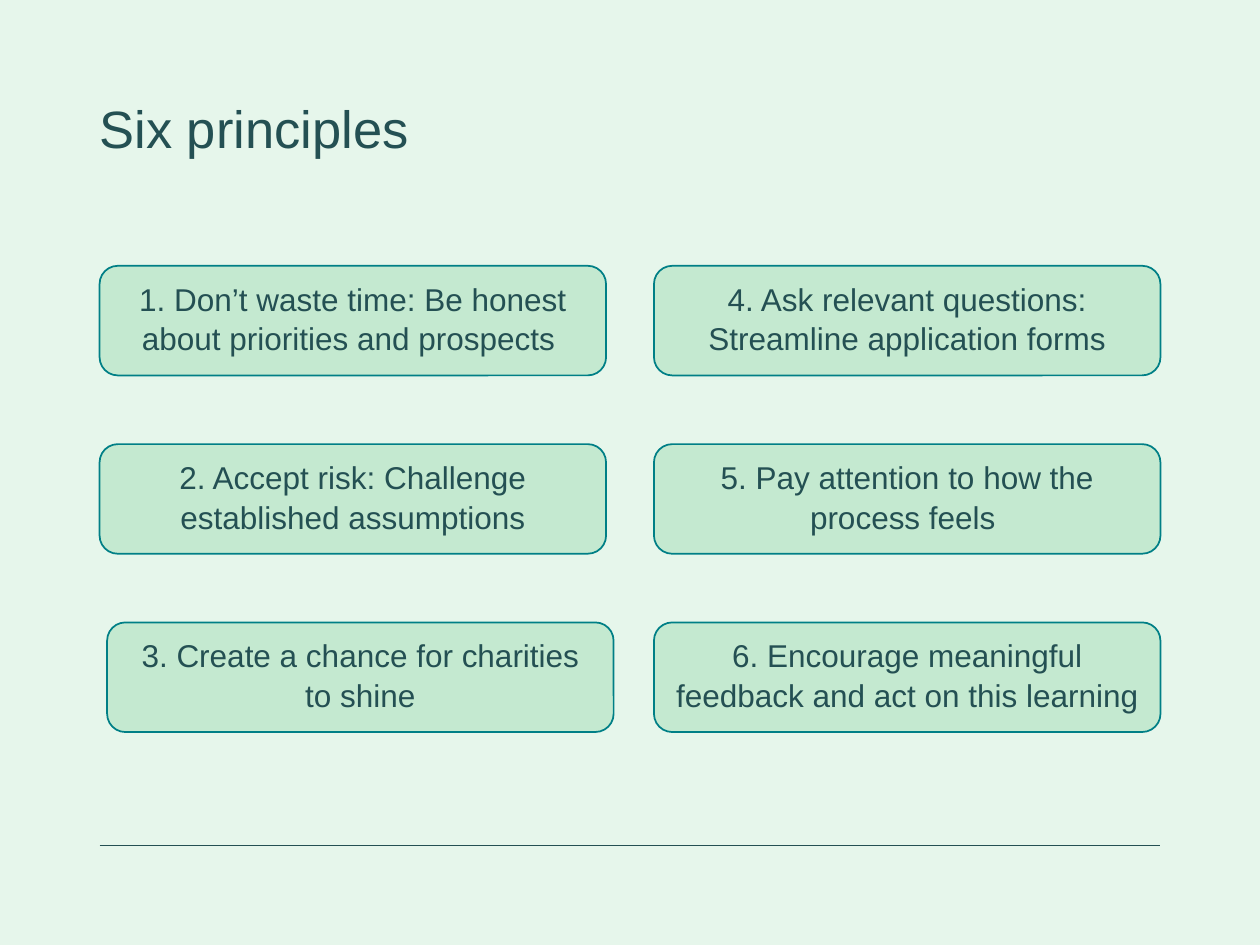
from pptx import Presentation
from pptx.dml.color import RGBColor as RGB
from pptx.enum.shapes import MSO_CONNECTOR as Link, MSO_SHAPE as Shape
from pptx.enum.text import MSO_ANCHOR as Anchor, PP_ALIGN as Align
from pptx.oxml.ns import qn
from pptx.util import Inches, Pt
from lxml.etree import SubElement

HUES = {"back": "E6F6EB", "box": "C4E9D0", "edge": "007F86", "ink": "245053"}
LEFT, RIGHT = 0.79, 9.21
COLS = (LEFT, 5.19)
TOP, STEP = 2.11, 1.415
WIDE, HIGH = 4.02, 0.87
NUDGE = {2: 0.06}  # the third box sits slightly to the right

RULES = (
    "1. Don’t waste time: Be honest about priorities and prospects ",
    "2. Accept risk: Challenge established assumptions",
    "3. Create a chance for charities to shine",
    "4. Ask relevant questions: Streamline application forms",
    "5. Pay attention to how the process feels ",
    "6. Encourage meaningful feedback and act on this learning",
)


def hue(name):
    return RGB.from_string(HUES[name])


def write(frame, text, size, align):
    frame.word_wrap = True
    frame.vertical_anchor = Anchor.MIDDLE
    frame.text = text
    para = frame.paragraphs[0]
    para.alignment = align
    font = para.runs[0].font
    font.name, font.size = "Arial", Pt(size)
    font.color.rgb = hue("ink")
    return para


deck = Presentation()
deck.slide_width, deck.slide_height = Inches(10), Inches(7.5)
slide = deck.slides.add_slide(deck.slide_layouts[6])
slide.background.fill.solid()
slide.background.fill.fore_color.rgb = hue("back")

# Footer rule
ends = [Inches(n) for n in (LEFT, 6.71, RIGHT, 6.71)]
rule = slide.shapes.add_connector(Link.STRAIGHT, *ends)
rule.line.color.rgb = hue("ink")
rule.line.width = Pt(1)
SubElement(rule._element.spPr, qn("a:effectLst"))

# Title
area = [Inches(n) for n in (LEFT, 0.71, RIGHT - LEFT, 0.6)]
frame = slide.shapes.add_textbox(*area).text_frame
frame.margin_left = frame.margin_right = 0
frame.margin_top = frame.margin_bottom = 0
write(frame, "Six principles", 30, Align.LEFT)

# Principles run down the first column, then the second
for i, text in enumerate(RULES):
    col, row = divmod(i, 3)
    area = (COLS[col] + NUDGE.get(i, 0), TOP + row * STEP, WIDE, HIGH)
    box = slide.shapes.add_shape(Shape.ROUNDED_RECTANGLE, *map(Inches, area))
    box.shadow.inherit = False
    box.fill.solid()
    box.fill.fore_color.rgb = hue("box")
    box.line.color.rgb = hue("edge")
    box.line.width = Pt(1)
    box.text_frame.margin_bottom = Inches(0.1)
    write(box.text_frame, text, 18, Align.CENTER).line_spacing = 1.05

deck.save("out.pptx")
